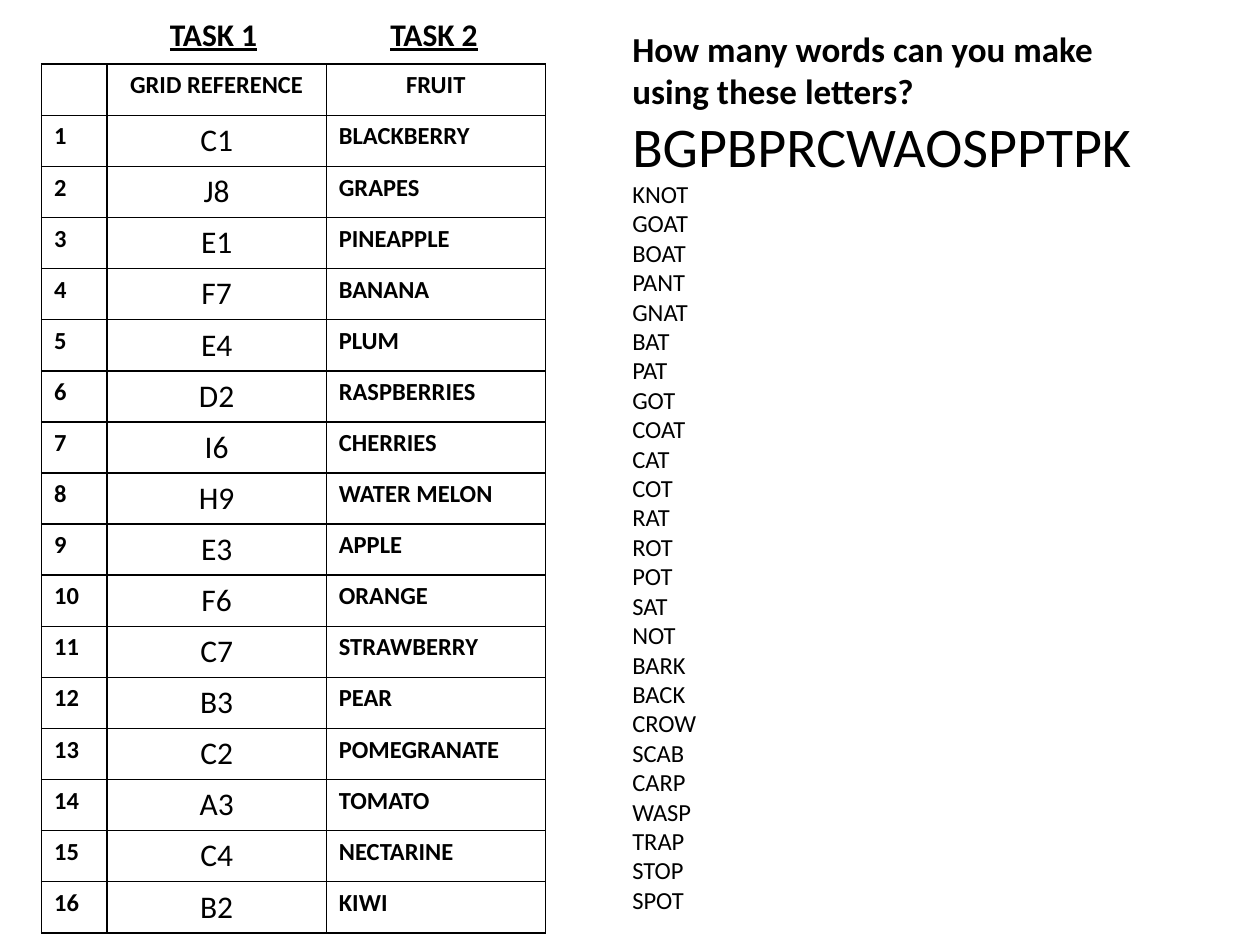
from lxml import etree
from pptx import Presentation
from pptx.dml.color import RGBColor
from pptx.enum.text import MSO_AUTO_SIZE, PP_ALIGN
from pptx.oxml.ns import qn
from pptx.util import Inches, Pt

LEFT, MID = PP_ALIGN.LEFT, PP_ALIGN.CENTER
GROW = MSO_AUTO_SIZE.SHAPE_TO_FIT_TEXT
BLACK = RGBColor(0, 0, 0)
FONT = "Calibri"
WIDE, HIGH = Inches(10), Inches(7.5)

# Table grid
COLS = [Inches(0.52), Inches(1.74), Inches(1.74)]
TOP, SIDE, DEEP = Inches(0.51), Inches(0.33), Inches(6.89)
HEADS = ["", "GRID REFERENCE", "FRUIT"]
FRUIT = [
    ("C1", "BLACKBERRY"), ("J8", "GRAPES"), ("E1", "PINEAPPLE"),
    ("F7", "BANANA"), ("E4", "PLUM"), ("D2", "RASPBERRIES"),
    ("I6", "CHERRIES"), ("H9", "WATER MELON"), ("E3", "APPLE"),
    ("F6", "ORANGE"), ("C7", "STRAWBERRY"), ("B3", "PEAR"),
    ("C2", "POMEGRANATE"), ("A3", "TOMATO"), ("C4", "NECTARINE"),
    ("B2", "KIWI"),
]

ASK = "How many words can you make using these letters?"
PILE = "BGPBPRCWAOSPPTPK"
WORDS = """KNOT GOAT BOAT PANT GNAT BAT PAT GOT COAT CAT COT RAT ROT POT SAT
NOT BARK BACK CROW SCAB CARP WASP TRAP STOP SPOT""".split()


def add_run(para, text, size, bold=False, line=None):
    run = para.add_run()
    run.text = text
    font = run.font
    font.name, font.size, font.bold = FONT, Pt(size), bold
    font.underline = line
    font.color.rgb = BLACK


def add_box(slide, left, top, wide, high, wrap):
    box = slide.shapes.add_textbox(left, top, wide, high)
    frame = box.text_frame
    frame.word_wrap = wrap
    frame.auto_size = GROW
    return frame


def add_edges(cell):
    """Draw a thin black line on each side of a cell."""
    props = cell._tc.get_or_add_tcPr()
    for spot, side in enumerate(("lnL", "lnR", "lnT", "lnB")):
        line = etree.Element(qn("a:" + side), w=str(Pt(1)))
        fill = etree.SubElement(line, qn("a:solidFill"))
        etree.SubElement(fill, qn("a:srgbClr"), val=str(BLACK))
        props.insert(spot, line)


def fill_cell(cell, text, size, bold, align):
    cell.fill.background()
    add_edges(cell)
    if text:
        para = cell.text_frame.paragraphs[0]
        para.alignment = align
        add_run(para, text, size, bold)


def add_grid(slide):
    rows = [HEADS] + [(str(n), *pair) for n, pair in enumerate(FRUIT, 1)]
    frame = slide.shapes.add_table(
        len(rows), len(COLS), SIDE, TOP, sum(COLS), DEEP)
    table = frame.table
    table.first_row = table.horz_banding = False
    for col, wide in zip(table.columns, COLS):
        col.width = wide
    for r, row in enumerate(rows):
        table.rows[r].height = DEEP // len(rows)
        for c, text in enumerate(row):
            ref = r > 0 and c == 1
            align = MID if r == 0 or ref else LEFT
            fill_cell(table.cell(r, c), text, 18 if ref else 14,
                      not ref, align)


def add_tasks(slide):
    wide = Inches(0.9)
    for n, left in enumerate((Inches(1.25), Inches(3)), 1):
        frame = add_box(slide, left, Inches(0.07), wide, Inches(0.4), False)
        add_run(frame.paragraphs[0], f"TASK {n}", 18, True, True)


def add_words(slide):
    frame = add_box(slide, Inches(4.92), Inches(0.17),
                    Inches(4.5), Inches(7.2), True)
    add_run(frame.paragraphs[0], ASK, 20, True)
    add_run(frame.add_paragraph(), PILE, 32)
    for word in WORDS:
        add_run(frame.add_paragraph(), word, 14)


def main():
    deck = Presentation()
    deck.slide_width, deck.slide_height = WIDE, HIGH
    slide = deck.slides.add_slide(deck.slide_layouts[6])
    # Left half: fruit grid under the task titles
    add_grid(slide)
    add_tasks(slide)
    # Right half: word puzzle
    add_words(slide)
    deck.save("out.pptx")


if __name__ == "__main__":
    main()
